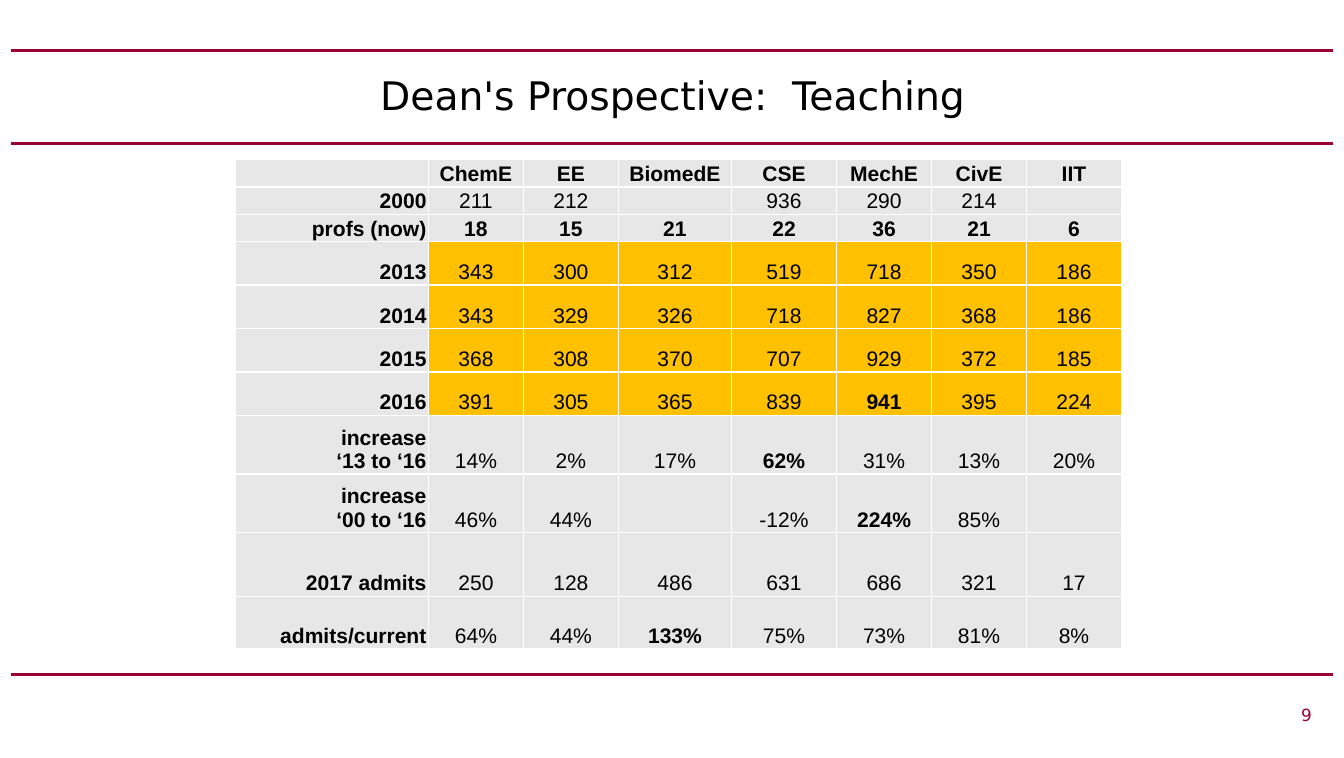
from dataclasses import dataclass

from lxml import etree
from pptx import Presentation
from pptx.dml.color import RGBColor
from pptx.enum import shapes, text
from pptx.oxml import ns
from pptx import util as u

PX = 9144  # 100 px to the inch
BLACK, WHITE, MAROON, GREY, AMBER = "000000", "FFFFFF", "990033", "E7E7E7", "FFC000"
ALIGN = text.PP_ALIGN


@dataclass
class Row:
    label: str
    values: str  # separated by spaces, "_" for an empty cell
    height: int
    bold: tuple[int, ...] = ()  # positions of bold values
    fill: str = GREY


ALL = tuple(range(7))
COLUMN_WIDTHS = [191, 94, 94, 112, 104, 94, 94, 94]
ROWS = [
    Row("", "ChemE EE BiomedE CSE MechE CivE IIT", 21, ALL),
    Row("2000", "211 212 _ 936 290 214 _", 21),
    Row("profs (now)", "18 15 21 22 36 21 6", 21, ALL),
    Row("2013", "343 300 312 519 718 350 186", 43, fill=AMBER),
    Row("2014", "343 329 326 718 827 368 186", 43, fill=AMBER),
    Row("2015", "368 308 370 707 929 372 185", 43, fill=AMBER),
    Row("2016", "391 305 365 839 941 395 224", 43, (4,), AMBER),
    Row("increase\n‘13 to ‘16", "14% 2% 17% 62% 31% 13% 20%", 58, (3,)),
    Row("increase\n‘00 to ‘16", "46% 44% _ -12% 224% 85% _", 58, (4,)),
    Row("2017 admits", "250 128 486 631 686 321 17", 63),
    Row("admits/current", "64% 44% 133% 75% 73% 81% 8%", 52, (2,)),
]


def px(length: int) -> u.Emu:
    return u.Emu(length * PX)


def color(value: str) -> RGBColor:
    return RGBColor.from_string(value)


def style(para, size: int, font: str, align, hue: str = BLACK, bold: bool = False) -> None:
    para.alignment = align
    para.font.size = u.Pt(size)
    para.font.name = font
    para.font.bold = bold
    para.font.color.rgb = color(hue)


def add_rule(page, y: int) -> None:
    rule = page.shapes.add_connector(
        shapes.MSO_CONNECTOR.STRAIGHT, px(11), px(y), px(1319), px(y))
    rule.line.color.rgb = color(MAROON)
    rule.line.width = u.Pt(2.25)
    etree.SubElement(rule._element.spPr, ns.qn("a:effectLst"))


def add_borders(cell) -> None:
    properties = cell._tc.get_or_add_tcPr()
    for side in ("lnL", "lnR", "lnT", "lnB"):
        border = etree.SubElement(properties, ns.qn(f"a:{side}"), w=str(u.Pt(1)))
        fill = etree.SubElement(border, ns.qn("a:solidFill"))
        etree.SubElement(fill, ns.qn("a:srgbClr"), val=WHITE)


def fill_cell(cell, words: str, align, bold: bool, fill: str) -> None:
    add_borders(cell)
    cell.fill.solid()
    cell.fill.fore_color.rgb = color(fill)
    cell.margin_left = cell.margin_right = px(2)
    cell.margin_top = cell.margin_bottom = px(1)
    cell.vertical_anchor = text.MSO_ANCHOR.BOTTOM
    cell.text_frame.text = words
    for para in cell.text_frame.paragraphs:
        style(para, 15, "Arial", align, bold=bold)
        if not words:  # keeps empty cells from stretching their row
            etree.SubElement(para._p, ns.qn("a:endParaRPr"), sz="1500")


def add_teaching_table(page) -> None:
    table = page.shapes.add_table(
        len(ROWS), len(COLUMN_WIDTHS), px(233), px(158),
        px(sum(COLUMN_WIDTHS)), px(sum(row.height for row in ROWS))).table
    table.first_row = table.horz_banding = False
    for column, width in zip(table.columns, COLUMN_WIDTHS):
        column.width = px(width)
    for index, row in enumerate(ROWS):
        table.rows[index].height = px(row.height)
        fill_cell(table.cell(index, 0), row.label, ALIGN.RIGHT, True, GREY)
        for position, value in enumerate(row.values.split()):
            words = "" if value == "_" else value
            fill_cell(table.cell(index, position + 1), words, ALIGN.CENTER,
                      position in row.bold, row.fill)


def main() -> None:
    deck = Presentation()
    deck.slide_width, deck.slide_height = px(1330), px(750)
    page = deck.slides.add_slide(deck.slide_layouts[5])

    # Rules across the page
    for y in (667, 142, 50):
        add_rule(page, y)

    # Title
    title = page.shapes.title
    title.left, title.top, title.width, title.height = px(67), px(50), px(1197), px(87)
    title.text_frame.text = "Dean's Prospective:  Teaching"
    title.text_frame.vertical_anchor = text.MSO_ANCHOR.MIDDLE
    style(title.text_frame.paragraphs[0], 28, "DejaVu Sans", ALIGN.CENTER)

    # Page number
    number = page.shapes.add_textbox(px(377), px(692), px(931), px(33)).text_frame
    number.word_wrap = True
    number.text = "9"
    style(number.paragraphs[0], 12, "DejaVu Sans", ALIGN.RIGHT, MAROON)

    # Teaching figures
    add_teaching_table(page)

    deck.save("out.pptx")


if __name__ == "__main__":
    main()
